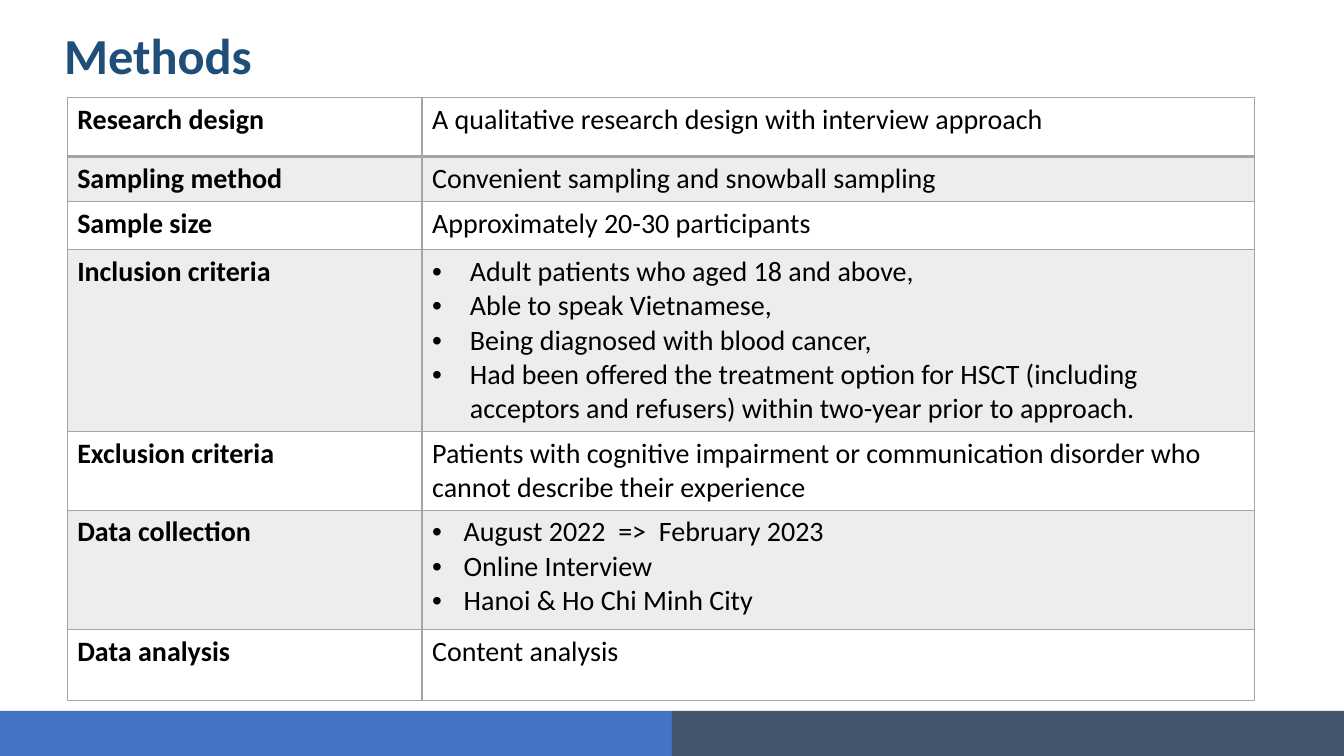
from dataclasses import dataclass

from lxml.etree import SubElement
from pptx import Presentation
from pptx.dml.color import RGBColor
from pptx.enum.shapes import MSO_SHAPE as Shape
from pptx.enum.text import MSO_ANCHOR as Anchor, MSO_AUTO_SIZE as AutoSize, PP_ALIGN as Align
from pptx.oxml import parse_xml
from pptx.oxml.ns import nsdecls, qn
from pptx.util import Pt

PX = 9525
BLUE = RGBColor(0x44, 0x72, 0xC4)
SLATE = RGBColor(0x44, 0x54, 0x6A)
NAVY = RGBColor(0x1F, 0x4E, 0x79)
BLACK = RGBColor(0, 0, 0)
GREY = RGBColor(0xA5, 0xA5, 0xA5)
FONT = "Calibri"


@dataclass(frozen=True)
class Method:
    label: str
    details: tuple[str, ...]
    height: int
    indent: int = 0


METHODS = (
    Method("Research design", ("A qualitative research design with interview approach",), 56),
    Method("Sampling method", ("Convenient sampling and snowball sampling",), 43),
    Method("Sample size", ("Approximately 20-30 participants",), 46),
    Method(
        "Inclusion criteria",
        (
            "Adult patients who aged 18 and above,",
            "Able to speak Vietnamese,",
            "Being diagnosed with blood cancer,",
            "Had been offered the treatment option for HSCT (including acceptors "
            "and refusers) within two-year prior to approach.",
        ),
        164,
        36,
    ),
    Method(
        "Exclusion criteria",
        ("Patients with cognitive impairment or communication disorder who "
         "cannot describe their experience",),
        71,
    ),
    Method(
        "Data collection",
        ("August 2022  =>  February 2023", "Online Interview", "Hanoi & Ho Chi Minh City"),
        114,
        30,
    ),
    Method("Data analysis", ("Content analysis",), 67),
)


def px(length: int) -> int:
    return length * PX


def write(para, text: str, *, size: int = 20, bold: bool = False,
          color: RGBColor = BLACK, indent: int = 0) -> None:
    para.alignment = Align.LEFT
    span = para.add_run()
    span.text = text
    span.font.name = FONT
    span.font.size = Pt(size)
    span.font.bold = bold
    span.font.color.rgb = color
    if indent:
        props = para._p.get_or_add_pPr()
        props.set("marL", str(px(indent)))
        props.set("indent", str(-px(indent)))
        SubElement(props, qn("a:buFont"), typeface="Arial")
        SubElement(props, qn("a:buChar"), char="•")


def write_cell(cell, texts: tuple[str, ...], *, bold: bool = False, indent: int = 0) -> None:
    frame = cell.text_frame
    for index, text in enumerate(texts):
        para = frame.add_paragraph() if index else frame.paragraphs[0]
        write(para, text, bold=bold, indent=indent)


def style_cell(cell, *, shaded: bool, top: int, bottom: int) -> None:
    props = cell._tc.get_or_add_tcPr()
    if shaded:
        cell.fill.solid()
        cell.fill.fore_color.rgb = GREY
        SubElement(props.find(".//" + qn("a:srgbClr")), qn("a:alpha"), val="20000")
    else:
        cell.fill.background()
    widths = {"lnL": 1, "lnR": 1, "lnT": top, "lnB": bottom}
    for index, (side, width) in enumerate(widths.items()):
        props.insert(index, parse_xml(
            f'<a:{side} {nsdecls("a")} w="{Pt(width)}"><a:solidFill>'
            f'<a:srgbClr val="{GREY}"/></a:solidFill></a:{side}>'))


def add_bar(page, left: int, color: RGBColor) -> None:
    bar = page.shapes.add_shape(Shape.RECTANGLE, px(left), px(677), px(640), px(43))
    bar.shadow.inherit = False
    bar.fill.solid()
    bar.fill.fore_color.rgb = color
    bar.line.fill.background()


def add_title(page, text: str) -> None:
    title = page.shapes.title
    title.left, title.top, title.width, title.height = px(49), px(25), px(687), px(68)
    frame = title.text_frame
    frame.auto_size = AutoSize.NONE
    frame.vertical_anchor = Anchor.BOTTOM
    frame.margin_left = frame.margin_right = px(12)
    frame.margin_top = frame.margin_bottom = px(12)
    para = frame.paragraphs[0]
    para.line_spacing = 0.9
    write(para, text, size=36, bold=True, color=NAVY)


def add_methods(page) -> None:
    height = sum(method.height for method in METHODS)
    table = page.shapes.add_table(len(METHODS), 2, px(64), px(93), px(1131), px(height)).table
    table.first_row = table.horz_banding = False
    for column, width in zip(table.columns, (338, 793)):
        column.width = px(width)
    for index, method in enumerate(METHODS):
        table.rows[index].height = px(method.height)
        label, details = table.rows[index].cells
        write_cell(label, (method.label,), bold=True)
        write_cell(details, method.details, indent=method.indent)
        for cell in (label, details):
            style_cell(cell, shaded=index % 2 == 1,
                       top=2 if index == 1 else 1, bottom=2 if index == 0 else 1)


def main() -> None:
    deck = Presentation()
    deck.slide_width, deck.slide_height = px(1280), px(720)
    page = deck.slides.add_slide(deck.slide_layouts[5])
    for left, color in ((0, BLUE), (640, SLATE)):
        add_bar(page, left, color)
    add_title(page, "Methods")
    add_methods(page)
    deck.save("out.pptx")


if __name__ == "__main__":
    main()
